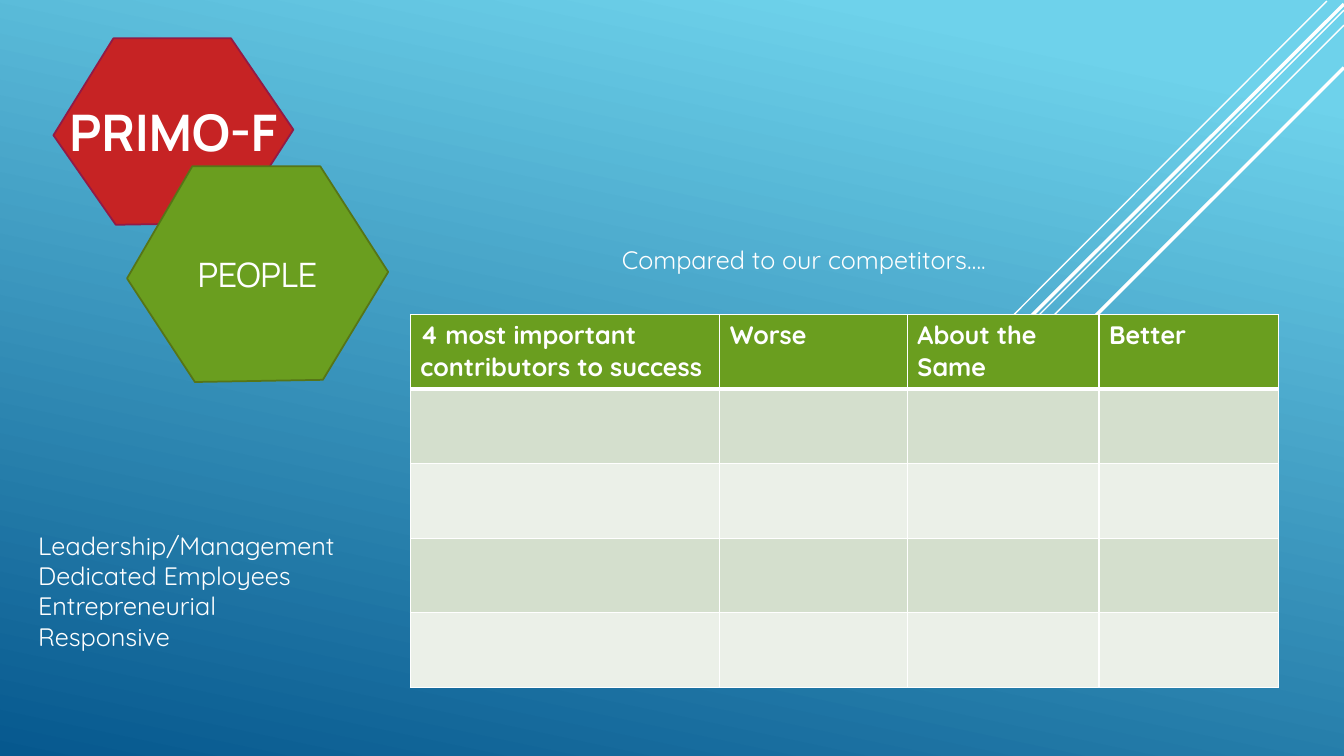
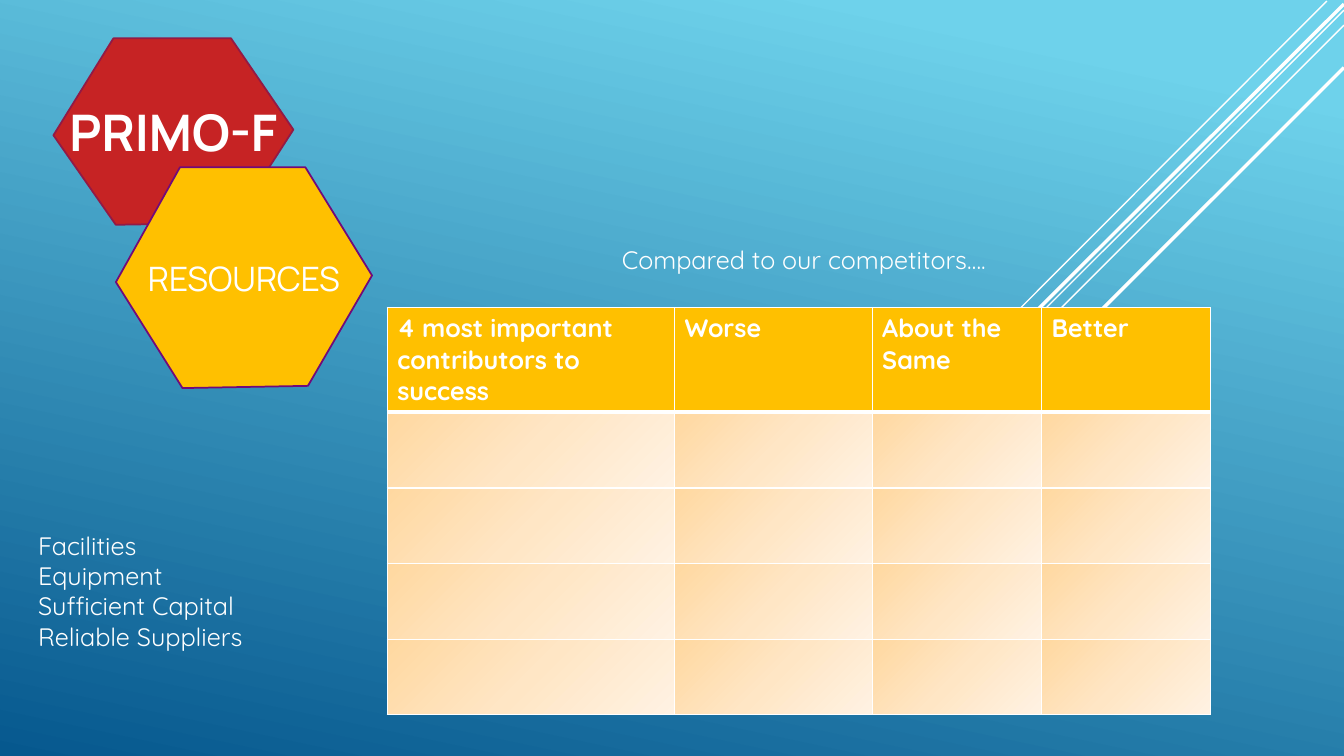
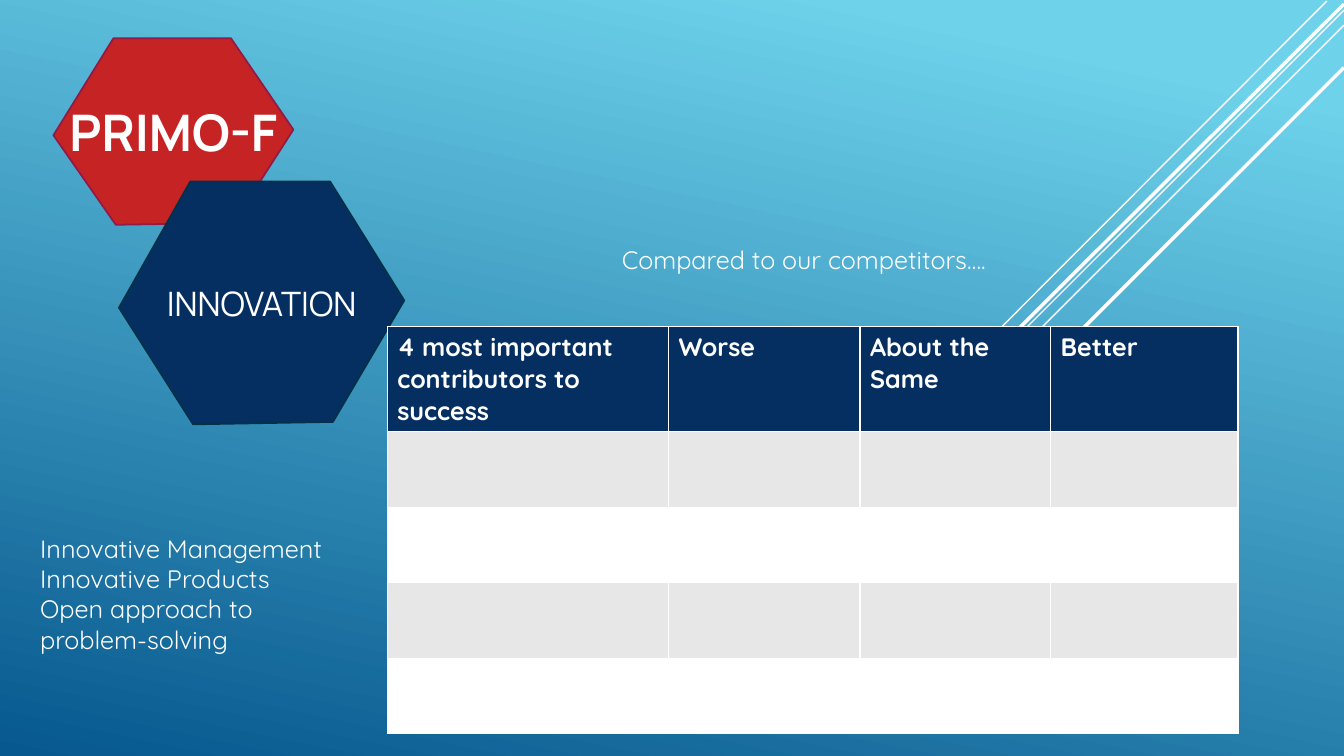
from copy import deepcopy

from lxml import etree
from pptx import Presentation
from pptx.dml.color import RGBColor
from pptx.enum import shapes, text
from pptx.oxml.ns import qn
from pptx.util import Inches, Pt

# Colours
WHITE = RGBColor(0xFF, 0xFF, 0xFF)
SKY = RGBColor(0x6E, 0xD2, 0xEB)
OCEAN = RGBColor(0x06, 0x58, 0x8E)
RED = RGBColor(0xC6, 0x23, 0x24)
CRIMSON = RGBColor(0x92, 0x1A, 0x46)
GREEN = RGBColor(0x6A, 0x9E, 0x1F)
DARK_GREEN = RGBColor(0x56, 0x75, 0x17)
SAGE = RGBColor(0xD4, 0xDF, 0xCD)
PALE_SAGE = RGBColor(0xEB, 0xF0, 0xE8)
AMBER = RGBColor(0xFF, 0xC0, 0x00)
PURPLE = RGBColor(0x71, 0x0A, 0x7A)
PEACH = RGBColor(0xFF, 0xD8, 0xA0)
MID_PEACH = RGBColor(0xFF, 0xE6, 0xC5)
PALE_PEACH = RGBColor(0xFF, 0xF2, 0xE3)
NAVY = RGBColor(0x05, 0x2F, 0x61)
DARK_TEAL = RGBColor(0x04, 0x31, 0x48)
GREY = RGBColor(0xE7, 0xE7, 0xE7)

# Shared style
HEAD_FONT = "Manrope"
BODY_FONT = "Quicksand"
HEXAGON = [(0.25, 0), (0.74, 0), (1, 0.49), (0.75, 0.99), (0.26, 1), (0, 0.52)]
RAYS = [  # from, to, width
    ((13.16, 0.01), (9, 4.18), 1),
    ((13.33, 0.1), (6.68, 6.75), 1),
    ((13.33, 0.25), (7.91, 5.67), 1),
    ((13.33, 0.04), (8.02, 5.34), 2.5),
    ((13.33, 0.67), (8.58, 5.42), 2.5),
]
HEADINGS = ["4 most important contributors to success", "Worse",
            "About the Same", "Better"]
PEACH_FADE = [(0, PEACH), (0.5, MID_PEACH), (1, PALE_PEACH)]


class Deck:
    def __init__(self):
        self.prs = Presentation()
        self.prs.slide_width, self.prs.slide_height = Inches(13.33), Inches(7.5)
        master = self.prs.slide_master
        self.gradient(master.background.fill, master.element,
                      [(0.1, SKY), (1, OCEAN)], 102)

    @staticmethod
    def gradient(fill, owner, stops, angle):
        """Fill with the stops, at a clockwise angle."""
        fill.gradient()
        fill.gradient_angle = 360 - angle
        gs_list = next(owner.iter(qn("a:gsLst")))
        for _ in stops[2:]:
            gs_list.append(deepcopy(gs_list[0]))
        for stop, (position, color) in zip(fill.gradient_stops, stops):
            stop.position = position
            stop.color.rgb = color

    @staticmethod
    def style(p, size, font, bold=False):
        p.font.size = Pt(size)
        p.font.name = font
        p.font.bold = bold
        p.font.color.rgb = WHITE

    def new_slide(self):
        self.slide = self.prs.slides.add_slide(self.prs.slide_layouts[6])
        for start, end, width in RAYS:
            self.line(start, end, width)
        self.hexagon("PRIMO-F", (0.53, 0.38, 2.38, 1.85), RED, CRIMSON, 36, True)

    def line(self, start, end, width):
        sp = self.slide.shapes.add_connector(
            shapes.MSO_CONNECTOR.STRAIGHT, *map(Inches, start + end))
        sp.line.color.rgb = WHITE
        sp.line.width = Pt(width)
        etree.SubElement(sp.element.spPr, qn("a:effectLst"))

    def hexagon(self, label, box, fill, outline, size=24, bold=False):
        left, top, width, height = box
        points = [(Inches(left + x * width), Inches(top + y * height))
                  for x, y in HEXAGON]
        builder = self.slide.shapes.build_freeform(*points[0])
        builder.add_line_segments(points[1:], close=True)
        sp = builder.convert_to_shape()
        sp.shadow.inherit = False
        sp.fill.solid()
        sp.fill.fore_color.rgb = fill
        sp.line.color.rgb = outline
        sp.line.width = Pt(1.25)
        tf = sp.text_frame
        tf.vertical_anchor = text.MSO_ANCHOR.MIDDLE
        p = tf.paragraphs[0]
        p.text = label
        p.alignment = text.PP_ALIGN.CENTER
        self.style(p, size, HEAD_FONT, bold)

    def textbox(self, lines, box):
        tf = self.slide.shapes.add_textbox(*map(Inches, box)).text_frame
        tf.word_wrap = True
        tf.auto_size = text.MSO_AUTO_SIZE.SHAPE_TO_FIT_TEXT
        tf.text = "\n".join(lines)
        for p in tf.paragraphs:
            self.style(p, 18, BODY_FONT)

    @staticmethod
    def borders(cell, **widths):
        """White cell borders; they stand before the fill."""
        tc_pr = cell._tc.get_or_add_tcPr()
        for i, side in enumerate("LRTB"):
            ln = etree.Element(qn(f"a:ln{side}"), w=str(Pt(widths.get(side, 1))))
            color = etree.SubElement(ln, qn("a:solidFill"))
            etree.SubElement(color, qn("a:srgbClr"), val=str(WHITE))
            tc_pr.insert(i, ln)

    def table(self, at, cols, rows, head, bands, rule):
        """Bands are the fills that the body rows take in turn."""
        table = self.slide.shapes.add_table(
            len(rows), len(cols), *map(Inches, at + (sum(cols), sum(rows)))).table
        for column, width in zip(table.columns, cols):
            column.width = Inches(width)
        for i, (row, height) in enumerate(zip(table.rows, rows)):
            row.height = Inches(height)
            fill = bands[(i - 1) % len(bands)] if i else head
            for cell, heading in zip(row.cells, HEADINGS):
                if isinstance(fill, list):
                    self.gradient(cell.fill, cell._tc, fill, 45)
                else:
                    cell.fill.solid()
                    cell.fill.fore_color.rgb = fill
                if i == 0:
                    p = cell.text_frame.paragraphs[0]
                    p.text = heading
                    self.style(p, 18, BODY_FONT, True)
                    self.borders(cell, B=rule)
                else:
                    self.borders(cell, T=rule if i == 1 else 1)

    def factor(self, name, hexagon, colors, points, points_box, table):
        """One slide of the series."""
        self.new_slide()
        self.hexagon(name, hexagon, *colors)
        self.table(head=colors[0], **table)
        self.textbox(points, points_box)
        self.textbox(["Compared to our competitors…."], (6.07, 2.37, 6.07, 0.71))


def main():
    deck = Deck()

    # People
    deck.factor(
        "PEOPLE", (1.26, 1.65, 2.59, 2.14), (GREEN, DARK_GREEN),
        ["Leadership/Management", "Dedicated Employees", "Entrepreneurial",
         "Responsive"],
        (0.28, 5.21, 3.36, 1.62),
        dict(at=(4.07, 3.12), cols=[3.07, 1.86, 1.9, 1.78], rows=[0.74] * 5,
             bands=[SAGE, PALE_SAGE], rule=3))

    # Resources
    deck.factor(
        "RESOURCES", (1.15, 1.66, 2.54, 2.19), (AMBER, PURPLE),
        ["Facilities", "Equipment", "Sufficient Capital", "Reliable Suppliers"],
        (0.28, 5.21, 3.36, 1.62),
        dict(at=(3.84, 3.05), cols=[2.85, 1.96, 1.68, 1.68],
             rows=[1.04] + [0.75] * 4, bands=[PEACH_FADE], rule=3))

    # Innovation
    deck.factor(
        "INNOVATION", (1.18, 1.8, 2.83, 2.41), (NAVY, DARK_TEAL),
        ["Innovative Management", "Innovative Products",
         "Open approach to problem-solving"],
        (0.3, 5.24, 3.29, 1.31),
        dict(at=(3.84, 3.24), cols=[2.79, 1.9, 1.89, 1.86],
             rows=[1.04] + [0.75] * 4, bands=[GREY, WHITE], rule=1))

    deck.prs.save("out.pptx")


if __name__ == "__main__":
    main()
